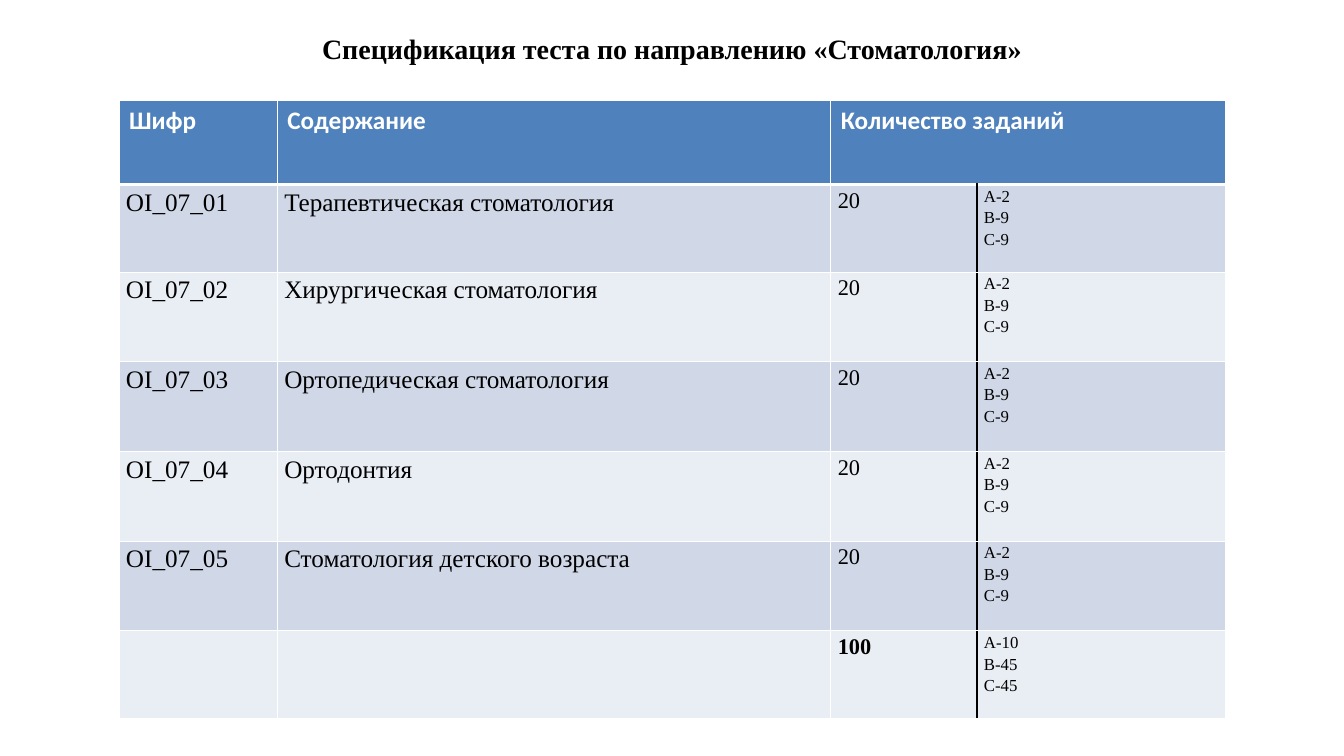
from lxml.etree import SubElement
from pptx import Presentation
from pptx.dml.color import RGBColor
from pptx.enum.text import MSO_ANCHOR, PP_ALIGN
from pptx.oxml.ns import qn
from pptx.util import Inches, Pt

HEADING = "Спецификация теста по направлению «Стоматология»"
HEADERS = ["Шифр", "Содержание", "Количество заданий", ""]
SUBJECTS = [
    "Терапевтическая стоматология",
    "Хирургическая стоматология",
    "Ортопедическая стоматология",
    "Ортодонтия",
    "Стоматология детского возраста",
]
TASKS, LEVELS = "20", "А-2\nВ-9\nС-9"
TOTAL = ["", "", "100", "А-10\nВ-45\nС-45"]

COLUMN_WIDTHS = [1.57, 5.49, 1.45, 2.47]
ROW_HEIGHTS = [0.83, 0.87, 0.89, 0.89, 0.89, 0.89, 0.87]
BODY_SIZES = [18, 18, 16, 12]
WHITE, BLACK, HEADER_FILL = "FFFFFF", "000000", "4F81BD"
BAND_FILLS = ["D0D8E8", "E9EDF4"]
SERIF = "Times New Roman"


def color(value):
    return RGBColor.from_string(value)


def style_text(frame, font_name, size, value, bold):
    for paragraph in frame.paragraphs:
        for font in [paragraph.font] + [run.font for run in paragraph.runs]:
            font.name, font.size, font.bold = font_name, Pt(size), bold
            font.color.rgb = color(value)


def add_border(cell, side, value, width):
    line = SubElement(cell._tc.get_or_add_tcPr(), qn(f"a:ln{side}"), w=str(Pt(width)))
    fill = SubElement(line, qn("a:solidFill"))
    SubElement(fill, qn("a:srgbClr"), val=value)


def style_cell(cell, row, column):
    header = row == 0
    divider = {2: "R", 3: "L"}.get(column)
    for side in "LRTB":
        dark = not header and side == divider
        thick = (header and side == "B") or (row == 1 and side == "T")
        add_border(cell, side, BLACK if dark else WHITE, 3 if thick else 1)
    cell.fill.solid()
    cell.fill.fore_color.rgb = color(HEADER_FILL if header else BAND_FILLS[(row - 1) % 2])
    if header:
        style_text(cell.text_frame, "Calibri", 18, WHITE, True)
        return
    cell.margin_left = cell.margin_right = Inches(0.07)
    cell.margin_top = cell.margin_bottom = 0
    for paragraph in cell.text_frame.paragraphs:
        paragraph.line_spacing = 1.15
    total = row == len(ROW_HEIGHTS) - 1 and column == 2
    style_text(cell.text_frame, SERIF, BODY_SIZES[column], BLACK, total)


def main():
    deck = Presentation()
    deck.slide_width, deck.slide_height = Inches(13.33), Inches(7.5)
    slide = deck.slides.add_slide(deck.slide_layouts[5])

    heading = slide.shapes.title
    heading.left, heading.top = Inches(0.57), Inches(0.31)
    heading.width, heading.height = Inches(12.19), Inches(0.34)
    frame = heading.text_frame
    frame.text = HEADING
    frame.margin_left = frame.margin_right = frame.margin_top = frame.margin_bottom = 0
    frame.vertical_anchor = MSO_ANCHOR.MIDDLE
    frame.paragraphs[0].alignment = PP_ALIGN.CENTER
    style_text(frame, SERIF, 20, BLACK, True)

    rows = [HEADERS]
    rows += [[f"OI_07_{number:02}", subject, TASKS, LEVELS]
             for number, subject in enumerate(SUBJECTS, 1)]
    rows.append(TOTAL)

    specification = slide.shapes.add_table(
        len(rows), len(COLUMN_WIDTHS), Inches(1.18), Inches(1),
        Inches(sum(COLUMN_WIDTHS)), Inches(sum(ROW_HEIGHTS))).table
    for column, width in zip(specification.columns, COLUMN_WIDTHS):
        column.width = Inches(width)
    for row, height in zip(specification.rows, ROW_HEIGHTS):
        row.height = Inches(height)
    for row, texts in enumerate(rows):
        for column, text in enumerate(texts):
            cell = specification.cell(row, column)
            cell.text_frame.text = text
            style_cell(cell, row, column)
    specification.cell(0, 2).merge(specification.cell(0, 3))

    deck.save("out.pptx")


if __name__ == "__main__":
    main()
